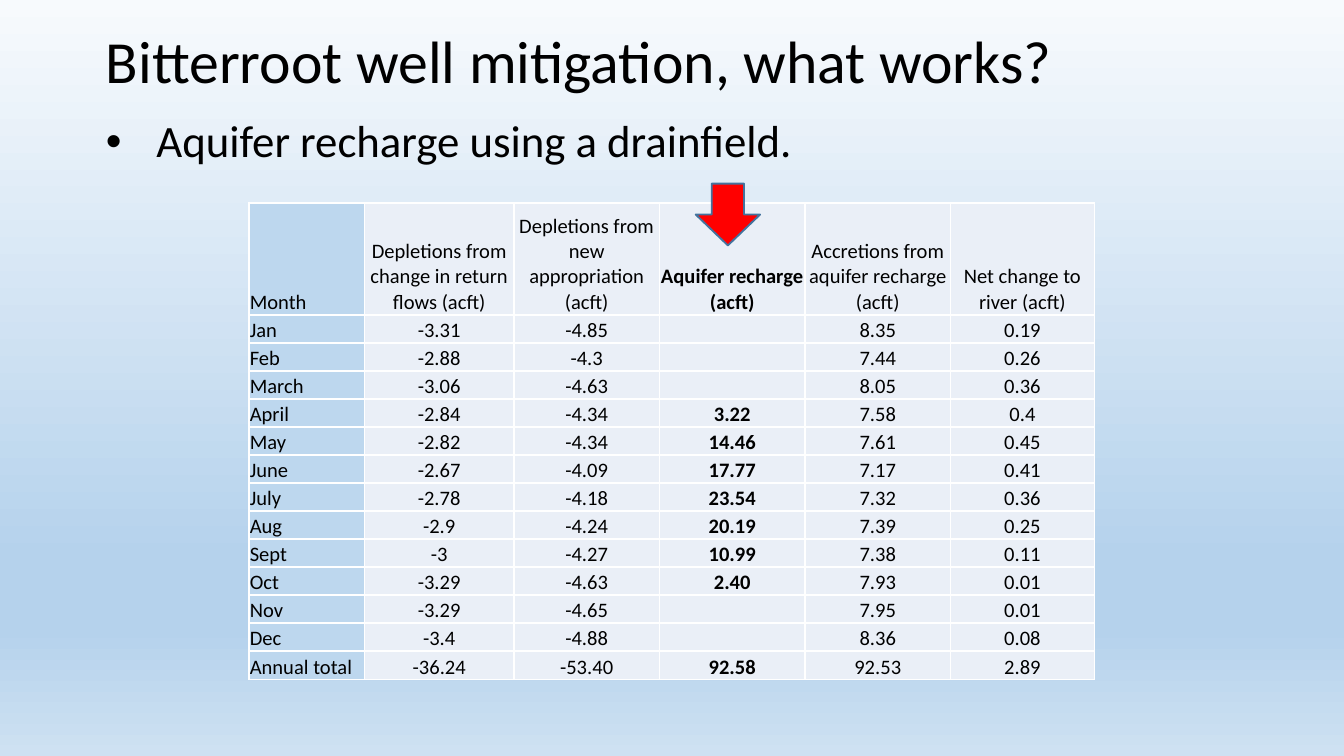
from lxml.etree import SubElement
from pptx import Presentation
from pptx.dml.color import RGBColor
from pptx.enum.shapes import MSO_SHAPE as Shape
from pptx.enum.text import MSO_ANCHOR as Anchor, PP_ALIGN as Align
from pptx.oxml.ns import qn
from pptx.util import Pt

FONT = "Calibri"
COLORS = {
    "text": "000000",
    "month": "BDD7EE",
    "value": "EAEFF7",
    "border": "FFFFFF",
    "arrow": "FF0000",
    "arrow_line": "43739E",
}
BACKGROUND_STOPS = [(0, "F7FAFD"), (74, "B5D2EC"), (83, "B5D2EC"), (100, "CEE1F2")]

HEADLINES = [
    ("Bitterroot well mitigation, what works?", 32),
    ("Aquifer recharge using a drainfield.", 24),
]
WATER_BALANCE = [
    ("Month", "Depletions from change in return flows (acft)",
     "Depletions from new appropriation (acft)", "Aquifer recharge (acft)",
     "Accretions from aquifer recharge (acft)", "Net change to river (acft)"),
    ("Jan", "-3.31", "-4.85", "", "8.35", "0.19"),
    ("Feb", "-2.88", "-4.3", "", "7.44", "0.26"),
    ("March", "-3.06", "-4.63", "", "8.05", "0.36"),
    ("April", "-2.84", "-4.34", "3.22", "7.58", "0.4"),
    ("May", "-2.82", "-4.34", "14.46", "7.61", "0.45"),
    ("June", "-2.67", "-4.09", "17.77", "7.17", "0.41"),
    ("July", "-2.78", "-4.18", "23.54", "7.32", "0.36"),
    ("Aug", "-2.9", "-4.24", "20.19", "7.39", "0.25"),
    ("Sept", "-3", "-4.27", "10.99", "7.38", "0.11"),
    ("Oct", "-3.29", "-4.63", "2.40", "7.93", "0.01"),
    ("Nov", "-3.29", "-4.65", "", "7.95", "0.01"),
    ("Dec", "-3.4", "-4.88", "", "8.36", "0.08"),
    ("Annual total", "-36.24", "-53.40", "92.58", "92.53", "2.89"),
]
MONTH_COL, RECHARGE_COL = 0, 3
COL_WIDTHS = [62, 80, 78, 78, 78, 77]
ROW_HEIGHTS = [60] + [15] * 12 + [15.5]


def rgb(name):
    return RGBColor.from_string(COLORS[name])


def style_runs(paragraph, size, bold=False):
    for run in paragraph.runs:
        run.font.name = FONT
        run.font.size = Pt(size)
        run.font.bold = bold
        run.font.color.rgb = rgb("text")


def paint_background(slide):
    fill = slide.background.fill
    fill.gradient()
    fill.gradient_angle = 270
    stops = slide.element.find(".//" + qn("a:gsLst"))
    stops.clear()
    for position, color in BACKGROUND_STOPS:
        stop = SubElement(stops, qn("a:gs"), pos=str(position * 1000))
        SubElement(stop, qn("a:srgbClr"), val=color)


def add_headlines(slide):
    frame = slide.shapes.add_textbox(Pt(49.7), Pt(13.7), Pt(620.6), Pt(375)).text_frame
    frame.word_wrap = True
    frame.text = "\n".join(text for text, size in HEADLINES)
    for paragraph, (text, size) in zip(frame.paragraphs, HEADLINES):
        paragraph.line_spacing = 0.9
        paragraph.space_after = Pt(12)
        style_runs(paragraph, size)
    bullet = frame.paragraphs[1]._p.get_or_add_pPr()
    bullet.set("marL", str(Pt(27)))
    bullet.set("indent", str(-Pt(27)))
    SubElement(bullet, qn("a:buFont"), typeface="Arial")
    SubElement(bullet, qn("a:buChar"), char="•")


def add_borders(cell):
    properties = cell._tc.get_or_add_tcPr()
    for side in ("lnL", "lnR", "lnT", "lnB"):
        line = SubElement(properties, qn("a:" + side), w=str(Pt(1)))
        SubElement(SubElement(line, qn("a:solidFill")), qn("a:srgbClr"), val=COLORS["border"])


def fill_cell(cell, text, col):
    add_borders(cell)
    cell.fill.solid()
    cell.fill.fore_color.rgb = rgb("month" if col == MONTH_COL else "value")
    cell.margin_left = cell.margin_right = cell.margin_top = Pt(0.5)
    cell.margin_bottom = 0
    cell.vertical_anchor = Anchor.BOTTOM
    cell.text_frame.text = text
    paragraph = cell.text_frame.paragraphs[0]
    paragraph.alignment = Align.LEFT if col == MONTH_COL else Align.CENTER
    style_runs(paragraph, 11, col == RECHARGE_COL)
    if not text:
        SubElement(paragraph._p, qn("a:endParaRPr"), sz="1100")


def add_water_balance(slide):
    table = slide.shapes.add_table(
        len(ROW_HEIGHTS), len(COL_WIDTHS), Pt(133.3), Pt(108.7),
        Pt(sum(COL_WIDTHS)), Pt(sum(ROW_HEIGHTS))).table
    table.first_row = table.horz_banding = False
    for column, width in zip(table.columns, COL_WIDTHS):
        column.width = Pt(width)
    for row, height, values in zip(table.rows, ROW_HEIGHTS, WATER_BALANCE):
        row.height = Pt(height)
        for col, (cell, text) in enumerate(zip(row.cells, values)):
            fill_cell(cell, text, col)


def add_recharge_arrow(slide):
    arrow = slide.shapes.add_shape(Shape.DOWN_ARROW, Pt(372.7), Pt(98.4), Pt(34.5), Pt(33.1))
    arrow.shadow.inherit = False
    arrow.fill.solid()
    arrow.fill.fore_color.rgb = rgb("arrow")
    arrow.line.color.rgb = rgb("arrow_line")
    arrow.line.width = Pt(1)


def main():
    deck = Presentation()
    deck.slide_width, deck.slide_height = Pt(720), Pt(405)
    slide = deck.slides.add_slide(deck.slide_layouts[6])
    paint_background(slide)
    add_headlines(slide)
    add_water_balance(slide)
    add_recharge_arrow(slide)
    deck.save("out.pptx")


if __name__ == "__main__":
    main()
